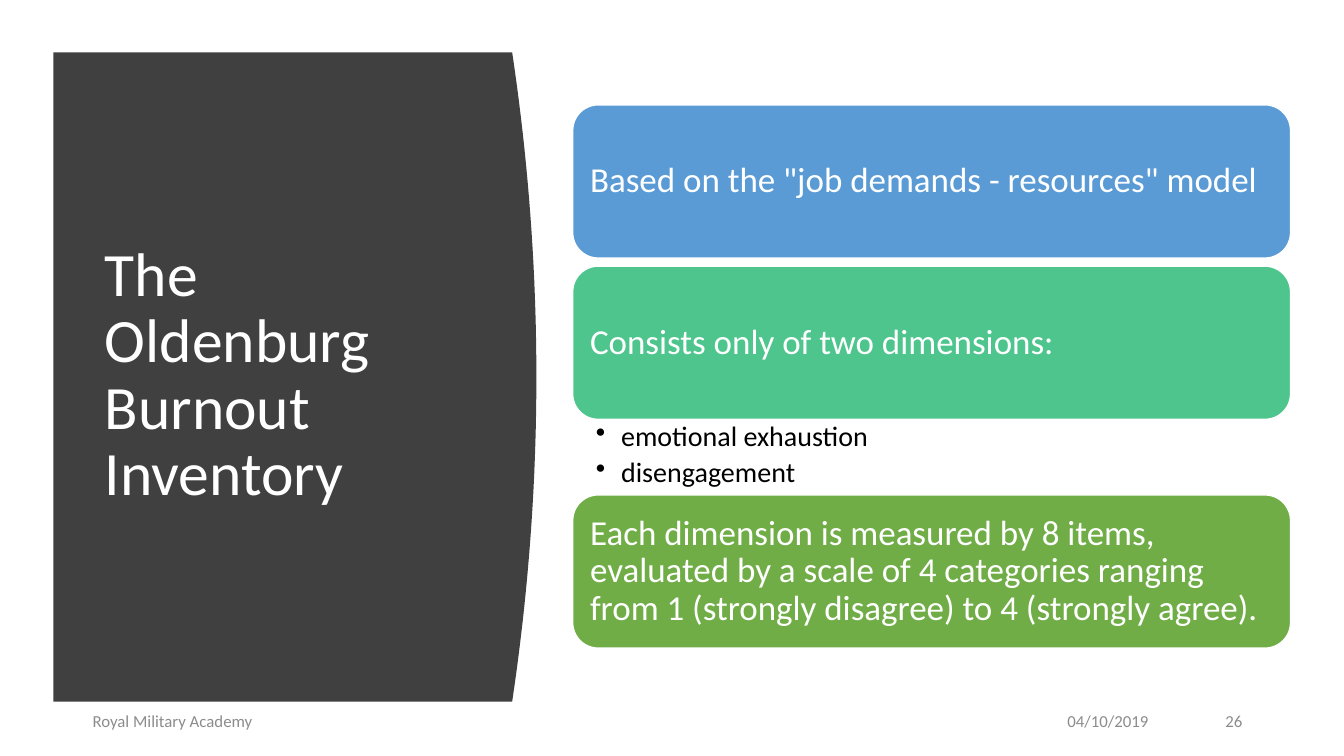
from lxml import etree
from pptx import Presentation
from pptx import util as u
from pptx.dml.color import RGBColor
from pptx.enum import shapes, text
from pptx.oxml.ns import qn

PX = 9144  # EMU per px, 100 px to the inch

WHITE = RGBColor(0xFF, 0xFF, 0xFF)
BLACK = RGBColor(0x00, 0x00, 0x00)
CHARCOAL = RGBColor(0x40, 0x40, 0x40)
GREY = RGBColor(0x8C, 0x8C, 0x8C)
BLUE = RGBColor(0x5B, 0x9B, 0xD5)
TEAL = RGBColor(0x4D, 0xC5, 0x8D)
GREEN = RGBColor(0x70, 0xAD, 0x47)

LEFT, RIGHT = text.PP_ALIGN.LEFT, text.PP_ALIGN.RIGHT
MIDDLE, TOP = text.MSO_ANCHOR.MIDDLE, text.MSO_ANCHOR.TOP


class SlideBuilder:
    font = "Calibri"

    def __init__(self, slide):
        self.slide = slide

    def set_text(self, frame, content, size, color, align=LEFT, anchor=MIDDLE,
                 spacing=1.0, margins=(10, 5, 10, 5)):
        frame.text = content
        frame.word_wrap = True
        frame.auto_size = text.MSO_AUTO_SIZE.NONE
        frame.vertical_anchor = anchor
        (frame.margin_left, frame.margin_top,
         frame.margin_right, frame.margin_bottom) = [m * PX for m in margins]
        for paragraph in frame.paragraphs:
            paragraph.alignment = align
            paragraph.line_spacing = spacing
            for run in paragraph.runs:
                run.font.name = self.font
                run.font.size = u.Pt(size)
                run.font.color.rgb = color

    def title(self, content, x, y, w, h):
        title = self.slide.shapes.title
        title.left, title.top, title.width, title.height = [
            v * PX for v in (x, y, w, h)]
        self.set_text(title.text_frame, content, 44, WHITE, spacing=0.9)

    def label(self, content, x, y, w, h, size, color, **style):
        box = self.slide.shapes.add_textbox(x * PX, y * PX, w * PX, h * PX)
        self.set_text(box.text_frame, content, size, color, **style)
        return box.text_frame

    def bullets(self, items, x, y, w, h):
        frame = self.label("\n".join(items), x, y, w, h, 20, BLACK, anchor=TOP,
                           spacing=0.9, margins=(23, 3, 19, 3))
        for paragraph in frame.paragraphs:
            paragraph.level = 1
            paragraph.space_after = u.Pt(4)
            props = paragraph._p.get_or_add_pPr()
            props.set("marL", str(25 * PX))
            props.set("indent", str(-25 * PX))
            etree.SubElement(props, qn("a:buChar")).set("char", "•")

    def card(self, content, x, y, w, h, fill):
        card = self.slide.shapes.add_shape(
            shapes.MSO_SHAPE.ROUNDED_RECTANGLE, x * PX, y * PX, w * PX, h * PX)
        card.shadow.inherit = False
        card.fill.solid()
        card.fill.fore_color.rgb = fill
        card.line.color.rgb = WHITE
        card.line.width = u.Pt(1)
        self.set_text(card.text_frame, content, 25, WHITE, spacing=0.9,
                      margins=(10, 10, 10, 10))

    def curved_panel(self, x, y, w, h, bulge, fill, steps=40):
        """Rectangle whose right edge bows outward as a parabola."""
        edge = []
        for i in range(steps + 1):
            t = i / steps
            edge.append(((x + w + bulge * 4 * t * (1 - t)) * PX, (y + h * t) * PX))
        outline = self.slide.shapes.build_freeform(x * PX, y * PX)
        outline.add_line_segments(edge + [(x * PX, (y + h) * PX)], close=True)
        panel = outline.convert_to_shape()
        panel.shadow.inherit = False
        panel.fill.solid()
        panel.fill.fore_color.rgb = fill
        panel.line.fill.background()
        # Keep the panel behind the title
        tree = self.slide.shapes._spTree
        tree.remove(panel._element)
        tree.insert(2, panel._element)


def main():
    deck = Presentation()
    deck.slide_width, deck.slide_height = 1333 * PX, 750 * PX
    page = SlideBuilder(deck.slides.add_slide(deck.slide_layouts[5]))

    # Title panel
    page.curved_panel(53, 52, 455, 644, 24, CHARCOAL)
    page.title("The Oldenburg Burnout Inventory", 94, 111, 374, 524)

    # Characteristics of the inventory
    column, width, card_height = 568, 712, 152
    cards = [
        ('Based on the "job demands - resources" model', 104, BLUE),
        ("Consists only of two dimensions:", 264, TEAL),
        ("Each dimension is measured by 8 items, evaluated by a scale of "
         "4 categories ranging from 1 (strongly disagree) to 4 (strongly agree).",
         491, GREEN),
    ]
    for statement, top, fill in cards:
        page.card(statement, column, top, width, card_height, fill)
    page.bullets(["emotional exhaustion", "disengagement"],
                 column, 416, width, 75)

    # Footer
    for content, left, footer_width, align in [
            ("Royal Military Academy", 82, 450, LEFT),
            ("04/10/2019", 849, 300, RIGHT),
            ("26", 1173, 69, RIGHT)]:
        page.label(content, left, 695, footer_width, 40, 12, GREY, align=align)

    deck.save("out.pptx")


if __name__ == "__main__":
    main()
